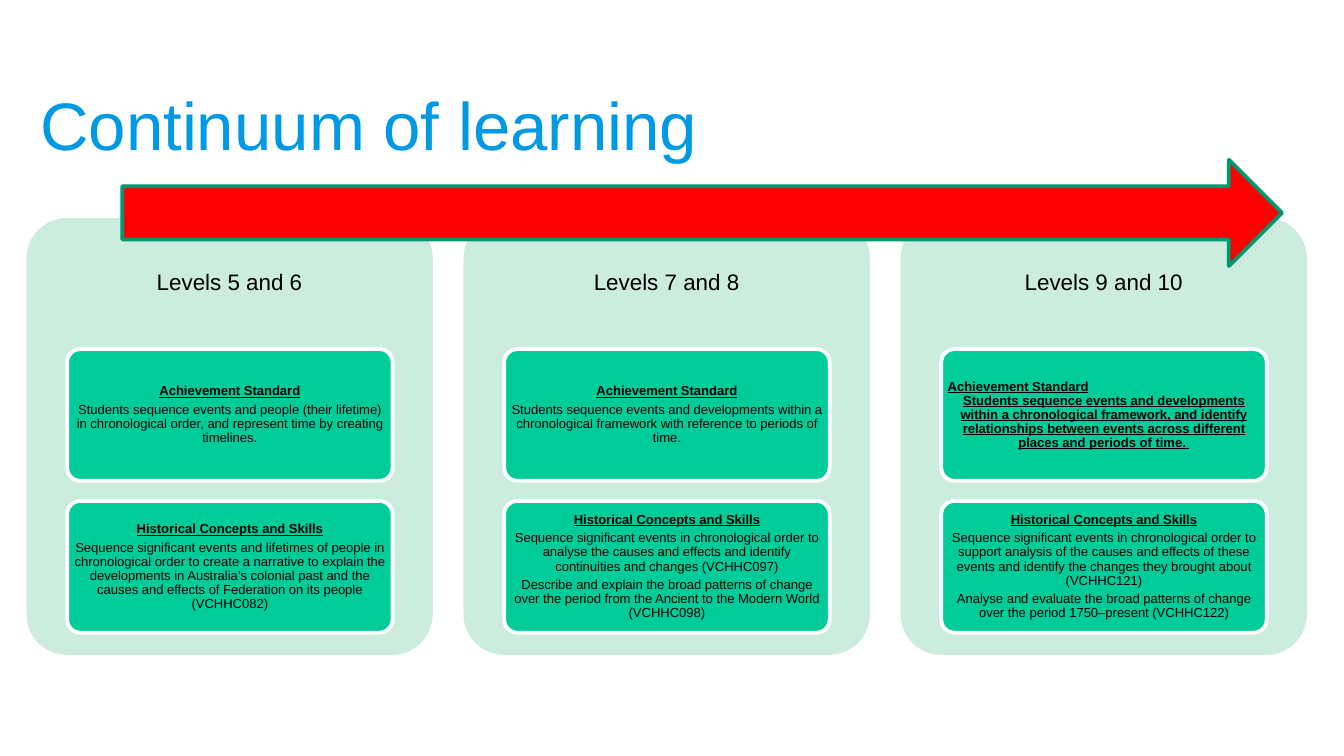
from pptx import Presentation
from pptx.dml.color import RGBColor
from pptx.enum.shapes import MSO_SHAPE as Shape
from pptx.enum.text import MSO_ANCHOR as Anchor, PP_ALIGN as Align
from pptx.util import Cm, Pt

TITLE_BLUE = RGBColor(0x00, 0x99, 0xE3)
PALE_GREEN = RGBColor(0xCC, 0xEC, 0xDE)
CARD_GREEN = RGBColor(0x00, 0xCC, 0x99)
ARROW_RED = RGBColor(0xFF, 0x00, 0x00)
ARROW_EDGE = RGBColor(0x00, 0x97, 0x71)
WHITE = RGBColor(0xFF, 0xFF, 0xFF)
BLACK = RGBColor(0x00, 0x00, 0x00)

HEADING = {"bold": True, "underline": True}
BODY = {"bold": False, "underline": False}
CENTRED = {"alignment": Align.CENTER, "line_spacing": 0.9, "space_after": Pt(2.4)}
LEFT_TIGHT = {"alignment": Align.LEFT, "line_spacing": 0.9, "space_after": Pt(0)}

STANDARD = ("Achievement Standard", HEADING, CENTRED)
SKILLS = ("Historical Concepts and Skills", HEADING, CENTRED)

# Each column: level heading, then the paragraphs of its two cards
COLUMNS = [
    ("Levels 5 and 6", [
        [STANDARD,
         ("Students sequence events and people (their lifetime) in chronological order, "
          "and represent time by creating timelines.", BODY, CENTRED)],
        [SKILLS,
         ("Sequence significant events and lifetimes of people in chronological order to "
          "create a narrative to explain the developments in Australia’s colonial past and "
          "the causes and effects of Federation on its people (VCHHC082)", BODY, CENTRED)],
    ]),
    ("Levels 7 and 8", [
        [STANDARD,
         ("Students sequence events and developments within a chronological framework "
          "with reference to periods of time.", BODY, CENTRED)],
        [SKILLS,
         ("Sequence significant events in chronological order to analyse the causes and "
          "effects and identify continuities and changes (VCHHC097)", BODY, CENTRED),
         ("Describe and explain the broad patterns of change over the period from the "
          "Ancient to the Modern World (VCHHC098)", BODY, CENTRED)],
    ]),
    ("Levels 9 and 10", [
        [("Achievement Standard", HEADING, LEFT_TIGHT),
         ("Students sequence events and developments within a chronological framework, "
          "and identify relationships between events across different places and periods "
          "of time. ", HEADING, CENTRED)],
        [SKILLS,
         ("Sequence significant events in chronological order to support analysis of the "
          "causes and effects of these events and identify the changes they brought about "
          "(VCHHC121)", BODY, CENTRED),
         ("Analyse and evaluate the broad patterns of change over the period 1750–present "
          "(VCHHC122)", BODY, CENTRED)],
    ]),
]

presentation = Presentation()
presentation.slide_width, presentation.slide_height = Cm(25.4), Cm(14.29)
slide = presentation.slides.add_slide(presentation.slide_layouts[6])


def add_block(kind, box, fill, line=None):
    shape = slide.shapes.add_shape(kind, *map(Cm, box))
    shape.shadow.inherit = False
    shape.fill.solid()
    shape.fill.fore_color.rgb = fill
    if line is None:
        shape.line.fill.background()
    else:
        shape.line.color.rgb = line
        shape.line.width = Pt(2)
    if kind == Shape.ROUNDED_RECTANGLE:
        shape.adjustments[0] = 0.1
    return shape


def write_text(shape, paragraphs, size, color, inset_x, inset_y):
    frame = shape.text_frame
    frame_format = {"word_wrap": True, "vertical_anchor": Anchor.MIDDLE,
                    "margin_left": Cm(inset_x), "margin_right": Cm(inset_x),
                    "margin_top": Cm(inset_y), "margin_bottom": Cm(inset_y)}
    for name, value in frame_format.items():
        setattr(frame, name, value)
    for index, (text, font_format, layout) in enumerate(paragraphs):
        paragraph = frame.add_paragraph() if index else frame.paragraphs[0]
        for name, value in layout.items():
            setattr(paragraph, name, value)
        run = paragraph.add_run()
        run.text = text
        run.font.color.rgb = color
        for name, value in {"name": "Arial", "size": Pt(size), **font_format}.items():
            setattr(run.font, name, value)


# Title
title = slide.shapes.add_textbox(Cm(0.51), Cm(1.14), Cm(24.2), Cm(2.39))
write_text(title, [("Continuum of learning", {}, {"alignment": Align.LEFT})],
           36, TITLE_BLUE, 0.25, 0.13)

# Level panels, each with a heading and two cards
for column, (level, cards) in enumerate(COLUMNS):
    left = 0.5 + column * 8.26
    add_block(Shape.ROUNDED_RECTANGLE, (left, 4.12, 7.68, 8.26), PALE_GREEN)
    heading = slide.shapes.add_textbox(Cm(left), Cm(4.12), Cm(7.68), Cm(2.47))
    write_text(heading, [(level, {}, CENTRED)], 12, BLACK, 0.12, 0.12)
    for row, paragraphs in enumerate(cards):
        card = add_block(Shape.ROUNDED_RECTANGLE,
                         (left + 0.77, 6.6 + row * 2.87, 6.15, 2.49), CARD_GREEN, WHITE)
        write_text(card, paragraphs, 7, BLACK, 0.05, 0.03)

# Arrow across the levels
add_block(Shape.RIGHT_ARROW, (2.31, 3.02, 21.92, 2.01), ARROW_RED, ARROW_EDGE)

presentation.save("out.pptx")
